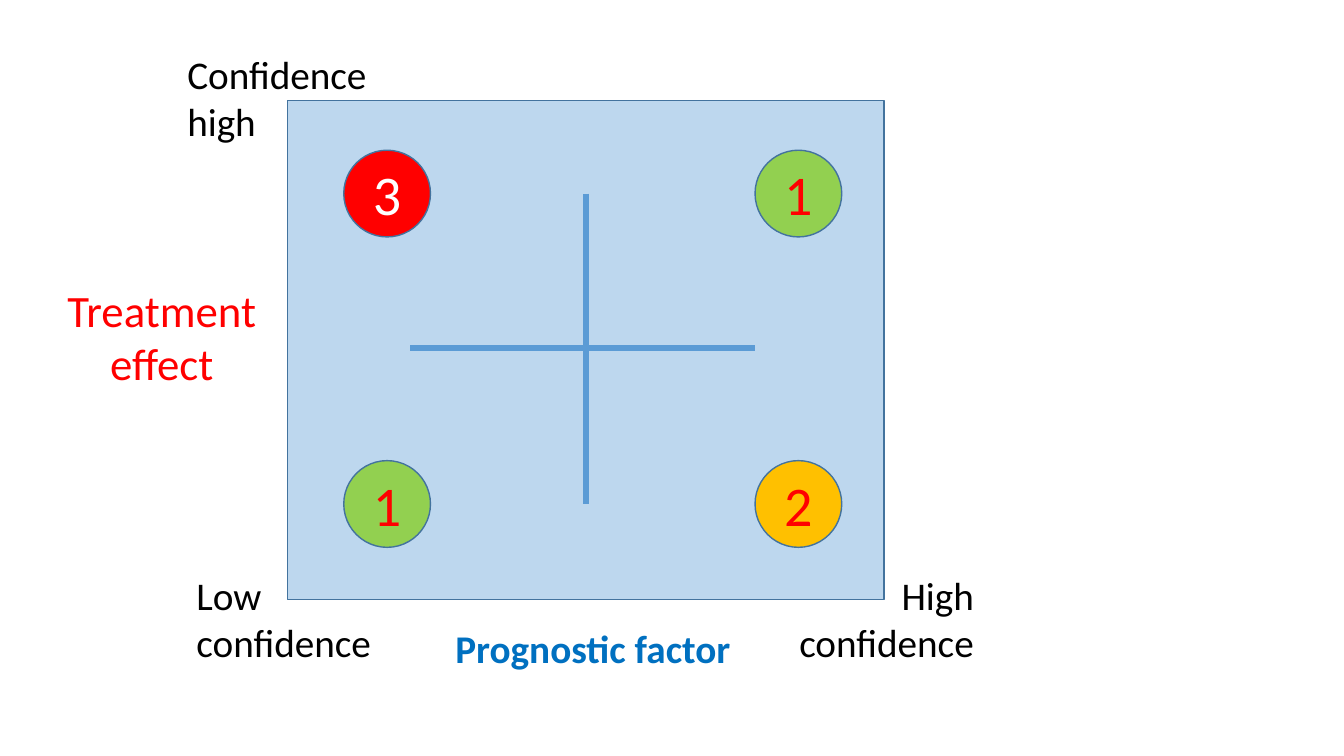
"""Build a slide that grades confidence in treatment effect and prognostic factor."""
from lxml import etree
from pptx import Presentation
from pptx.dml.color import RGBColor
from pptx.enum.shapes import MSO_CONNECTOR, MSO_SHAPE
from pptx.enum.text import MSO_ANCHOR, MSO_AUTO_SIZE, PP_ALIGN
from pptx.oxml.ns import qn
from pptx.util import Inches, Pt

LEFT, CENTER, RIGHT = PP_ALIGN.LEFT, PP_ALIGN.CENTER, PP_ALIGN.RIGHT
TOP, MIDDLE = MSO_ANCHOR.TOP, MSO_ANCHOR.MIDDLE
FIT_SHAPE = MSO_AUTO_SIZE.SHAPE_TO_FIT_TEXT
RECTANGLE, OVAL = MSO_SHAPE.RECTANGLE, MSO_SHAPE.OVAL
STRAIGHT = MSO_CONNECTOR.STRAIGHT

WIDTH, HEIGHT = Inches(13.33), Inches(7.5)
FONT = "Calibri"
BLACK, WHITE, RED, BLUE = "000000", "FFFFFF", "FF0000", "0070C0"
GREEN, AMBER = "92D050", "FFC000"
PANEL, OUTLINE, AXIS = "BDD7EE", "43739E", "5B9BD5"

COLUMNS, ROWS = (25.58, 56.18), (19.87, 60.93)
BADGE_WIDTH, BADGE_HEIGHT = 6.45, 11.47
LABEL_WIDTH, LABEL_HEIGHT = 14.85, 13.87
CROSS_X, CROSS_Y, CROSS_LEFT = 43.58, 46, 30.53


def color(code):
    """Turn a hex string into a colour."""
    return RGBColor.from_string(code)


def across(percent):
    """Return a share of the slide's width."""
    return round(WIDTH * percent / 100)


def down(percent):
    """Return a share of the slide's height."""
    return round(HEIGHT * percent / 100)


def place(left, top, width, height):
    """Return a frame given in percent of the slide."""
    return across(left), down(top), across(width), down(height)


def write(box, text, size=28, ink=BLACK, bold=False, align=LEFT, anchor=TOP):
    """Fill a box with formatted text, one paragraph per line."""
    frame = box.text_frame
    frame.word_wrap = True
    frame.vertical_anchor = anchor
    for index, line in enumerate(text.split("\n")):
        para = frame.add_paragraph() if index else frame.paragraphs[0]
        para.alignment = align
        span = para.add_run()
        span.text = line
        span.font.name = FONT
        span.font.size = Pt(size)
        span.font.bold = bold
        span.font.color.rgb = color(ink)


def add_label(page, text, area, **style):
    """Add a text box that grows with its text."""
    box = page.shapes.add_textbox(*place(*area))
    write(box, text, **style)
    box.text_frame.auto_size = FIT_SHAPE


def add_figure(page, kind, area, fill):
    """Add a filled and outlined shape."""
    figure = page.shapes.add_shape(kind, *place(*area))
    figure.shadow.inherit = False
    figure.fill.solid()
    figure.fill.fore_color.rgb = color(fill)
    figure.line.color.rgb = color(OUTLINE)
    figure.line.width = Pt(1)
    return figure


def add_badge(page, column, row, grade, fill, ink=RED):
    """Add a round grade in one quadrant."""
    area = COLUMNS[column], ROWS[row], BADGE_WIDTH, BADGE_HEIGHT
    badge = add_figure(page, OVAL, area, fill)
    write(badge, grade, size=40, ink=ink, align=CENTER, anchor=MIDDLE)


def add_axis(page, start, end):
    """Add one bar of the central cross."""
    axis = page.shapes.add_connector(
        STRAIGHT, across(start[0]), down(start[1]), across(end[0]), down(end[1]))
    axis.line.color.rgb = color(AXIS)
    axis.line.width = Pt(4.5)
    etree.SubElement(axis.element.spPr, qn("a:effectLst"))


def main():
    """Build and save the slide."""
    deck = Presentation()
    deck.slide_width, deck.slide_height = WIDTH, HEIGHT
    page = deck.slides.add_slide(deck.slide_layouts[6])

    add_figure(page, RECTANGLE, (21.38, 13.33, 44.4, 66), PANEL)
    add_label(page, "Low confidence", (13.88, 74.93, LABEL_WIDTH, LABEL_HEIGHT))
    add_label(page, "High confidence", (58.35, 74.93, LABEL_WIDTH, LABEL_HEIGHT),
              align=RIGHT)
    add_label(page, "Confidence\nhigh", (13.2, 6, LABEL_WIDTH, LABEL_HEIGHT))
    add_label(page, "Treatment\neffect", (4.05, 36.67, 15.98, 15.73),
              size=32, ink=RED, align=CENTER)
    add_label(page, "Prognostic factor", (32.03, 81.87, 24.15, 7.6),
              ink=BLUE, bold=True, align=CENTER)

    add_badge(page, 1, 0, "1", GREEN)
    add_badge(page, 0, 1, "1", GREEN)
    add_badge(page, 1, 1, "2", AMBER)
    add_badge(page, 0, 0, "3", RED, ink=WHITE)

    upper, lower = (row + BADGE_HEIGHT / 2 for row in ROWS)
    add_axis(page, (CROSS_X, upper), (CROSS_X, lower))
    add_axis(page, (CROSS_LEFT, CROSS_Y), (COLUMNS[1], CROSS_Y))
    deck.save("out.pptx")


if __name__ == "__main__":
    main()
